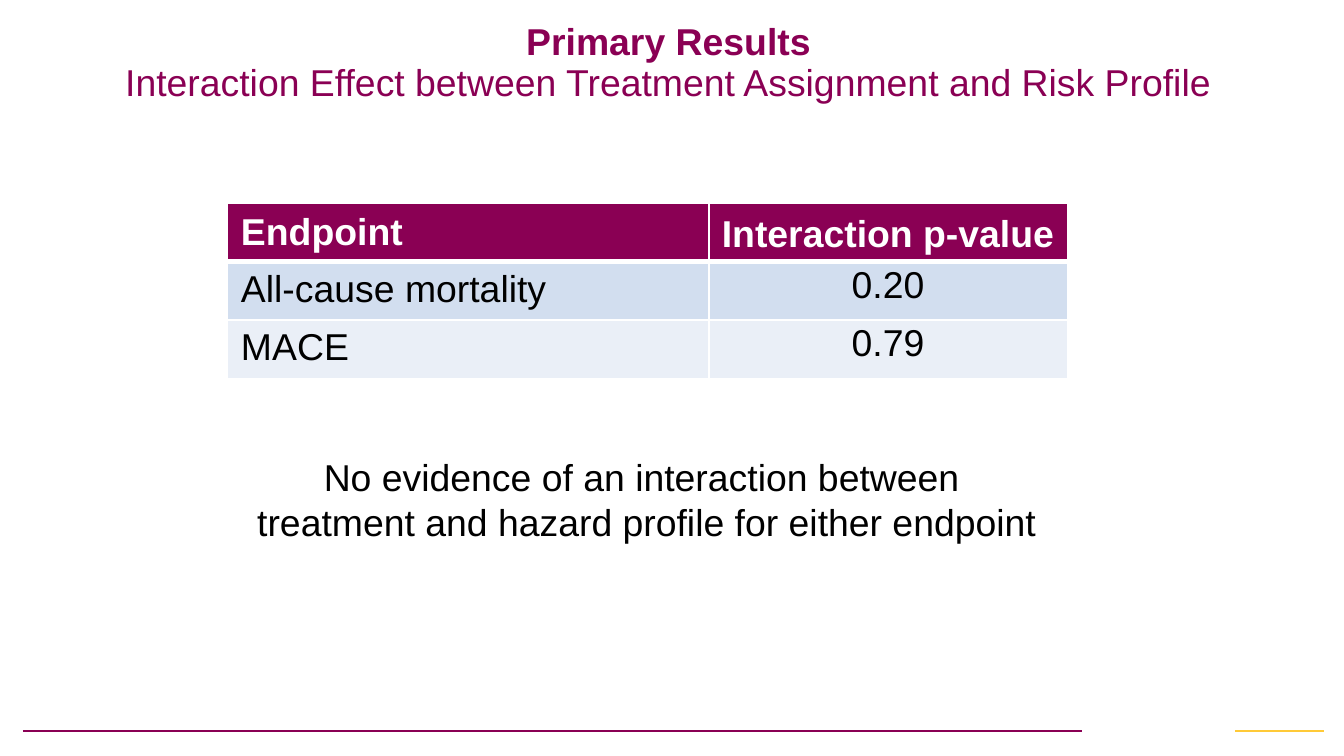
from dataclasses import dataclass

from lxml import etree
from pptx import Presentation
from pptx.dml.color import RGBColor
from pptx.enum.shapes import MSO_CONNECTOR
from pptx.enum.text import MSO_ANCHOR, PP_ALIGN
from pptx.oxml.ns import qn
from pptx.util import Pt

STRAIGHT = MSO_CONNECTOR.STRAIGHT
MIDDLE, TOP = MSO_ANCHOR.MIDDLE, MSO_ANCHOR.TOP
CENTER, LEFT = PP_ALIGN.CENTER, PP_ALIGN.LEFT


@dataclass(frozen=True)
class Theme:
    font: str = "Arial"
    size: int = 20
    plum: str = "8A0054"
    gold: str = "FFCA38"
    white: str = "FFFFFF"
    black: str = "000000"
    bands: tuple = ("D2DEEF", "EAEFF7")


THEME = Theme()


def add_run(paragraph, text, color, bold=False):
    run = paragraph.add_run()
    run.text = text
    run.font.name = THEME.font
    run.font.size = Pt(THEME.size)
    run.font.bold = bold
    run.font.color.rgb = RGBColor.from_string(color)


def set_borders(cell, bottom_width):
    """Draw white cell borders, 1 pt except for the bottom one."""
    properties = cell._tc.get_or_add_tcPr()
    widths = {"a:lnL": 1, "a:lnR": 1, "a:lnT": 1, "a:lnB": bottom_width}
    for position, (tag, width) in enumerate(widths.items()):
        border = etree.Element(qn(tag), w=str(Pt(width)))
        fill = etree.SubElement(border, qn("a:solidFill"))
        etree.SubElement(fill, qn("a:srgbClr"), val=THEME.white)
        properties.insert(position, border)


presentation = Presentation()
presentation.slide_width = Pt(720)
presentation.slide_height = Pt(405)
slide = presentation.slides.add_slide(presentation.slide_layouts[6])

# Footer rules
RULE_Y = 391.7
for start, end, color in ((12.2, 579.6, THEME.plum), (661.7, 709.2, THEME.gold)):
    rule = slide.shapes.add_connector(STRAIGHT, Pt(start), Pt(RULE_Y), Pt(end), Pt(RULE_Y))
    rule.line.color.rgb = RGBColor.from_string(color)
    rule.line.width = Pt(1)
    etree.SubElement(rule._element.spPr, qn("a:effectLst"))

# Title
title = slide.shapes.add_textbox(Pt(13.7), Pt(13), Pt(689), Pt(42.5)).text_frame
title.word_wrap = True
title.vertical_anchor = MIDDLE
title.margin_left = title.margin_right = Pt(5)
title.margin_top = title.margin_bottom = Pt(2.9)
paragraph = title.paragraphs[0]
paragraph.alignment = CENTER
paragraph.line_spacing = 0.9
add_run(paragraph, "Primary Results", THEME.plum, bold=True)
paragraph.add_line_break()
add_run(paragraph, "Interaction Effect between Treatment Assignment and Risk Profile", THEME.plum)

# Endpoint table
ROWS = (
    ("Endpoint", "Interaction p-value"),
    ("All-cause mortality", "0.20"),
    ("MACE", "0.79"),
)
COLUMN_WIDTHS = (257.8, 192.2)
ROW_HEIGHT = 29.3
table = slide.shapes.add_table(
    len(ROWS), len(COLUMN_WIDTHS), Pt(121.9), Pt(109),
    Pt(sum(COLUMN_WIDTHS)), Pt(ROW_HEIGHT * len(ROWS)),
).table
for column, width in zip(table.columns, COLUMN_WIDTHS):
    column.width = Pt(width)
for row_index, texts in enumerate(ROWS):
    table.rows[row_index].height = Pt(ROW_HEIGHT)
    header = row_index == 0
    fill = THEME.plum if header else THEME.bands[row_index - 1]
    for column_index, text in enumerate(texts):
        cell = table.cell(row_index, column_index)
        cell.fill.solid()
        cell.fill.fore_color.rgb = RGBColor.from_string(fill)
        cell.vertical_anchor = MIDDLE if header else TOP
        paragraph = cell.text_frame.paragraphs[0]
        paragraph.alignment = LEFT
        if column_index == 1:
            cell.margin_left = cell.margin_right = Pt(2.2)
            cell.margin_top = cell.margin_bottom = 0
            paragraph.alignment = CENTER
            paragraph.line_spacing = 1.07
            paragraph.space_after = Pt(2)
        add_run(paragraph, text, THEME.white if header else THEME.black, header)
        set_borders(cell, 3 if header else 1)

# Conclusion
conclusion = slide.shapes.add_textbox(Pt(67), Pt(239.8), Pt(559.4), Pt(55.4)).text_frame
conclusion.word_wrap = True
LINES = (
    "No evidence of an interaction between ",
    "treatment and hazard profile for either endpoint",
)
for index, text in enumerate(LINES):
    paragraph = conclusion.add_paragraph() if index else conclusion.paragraphs[0]
    paragraph.alignment = CENTER
    add_run(paragraph, text, THEME.black)

presentation.save("out.pptx")
